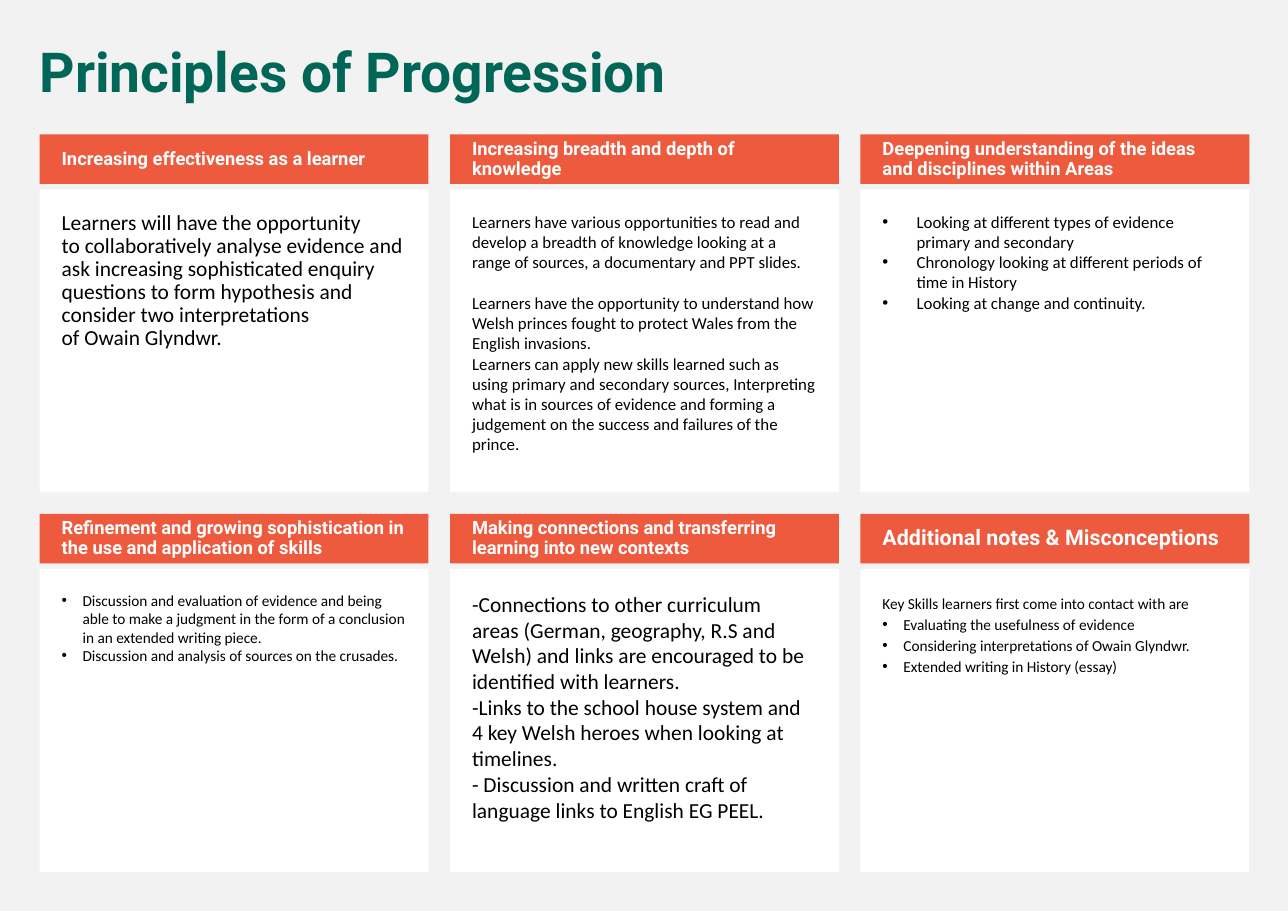
from dataclasses import dataclass

from lxml.etree import SubElement
from pptx import Presentation
from pptx.dml.color import RGBColor as Color
from pptx.enum.shapes import MSO_SHAPE as Shape
from pptx.enum.text import MSO_ANCHOR as Anchor, PP_ALIGN as Align
from pptx.oxml.ns import qn
from pptx.util import Inches, Pt


@dataclass(frozen=True)
class Theme:
    background: str = "F2F2F2"
    title: str = "006758"
    header: str = "ED5A3E"
    header_text: str = "FFFFFF"
    card: str = "FFFFFF"
    body_text: str = "000000"
    heading_font: str = "Roboto"
    body_font: str = "Calibri"
    title_size: int = 36
    header_size: int = 12
    large: int = 14
    medium: int = 11
    small: int = 10


theme = Theme()

# Grid in inches: three columns, two rows
SLIDE_WIDTH, SLIDE_HEIGHT = 11.69, 8.27
LEFT, RIGHT, TOP = 0.36, 11.34, 1.22
COLUMNS, COLUMN_WIDTH = 3, 3.53
GUTTER = (RIGHT - LEFT - COLUMNS * COLUMN_WIDTH) / (COLUMNS - 1)
HEADER_HEIGHT, HEADER_GAP, BODY_HEIGHT = 0.45, 0.05, 2.75
ROW_PITCH = HEADER_HEIGHT + HEADER_GAP + BODY_HEIGHT + GUTTER

# In the wording below, "~" stands for a no-break space
NO_BREAK_SPACE = chr(160)

# Each card: header, header size, body size, line spacing, bullet indent,
# space after each paragraph, paragraphs (a leading "•" makes a bullet)
cards = [
    ("Increasing effectiveness as a learner", theme.header_size, theme.large, 0.9, 0, [0], [
        "Learners will have the opportunity to~collaboratively~analyse~evidence and "
        "ask~increasing sophisticated enquiry questions to~form hypothesis and consider "
        "two~interpretations of~Owain~Glyndwr.~",
    ]),
    ("Increasing breadth and depth of knowledge", theme.header_size, theme.medium, 1, 0,
     [13.4, 0, 0], [
        "Learners have various opportunities to read and develop a~breadth of knowledge "
        "looking at a range of sources, a~documentary and PPT slides.",
        "Learners~have the opportunity to~understand how Welsh~princes fought to protect "
        "Wales from the English invasions.~",
        "Learners can apply new skills learned such as using primary~and secondary sources, "
        "Interpreting what is in sources of~evidence and forming a judgement on the success "
        "and~failures of the prince.",
    ]),
    ("Deepening understanding of the ideas and~disciplines within Areas",
     theme.header_size, theme.medium, 1, 0.31, [0, 0, 0], [
        "•Looking at different types of evidence primary and~secondary",
        "•Chronology looking at different periods of time in~History",
        "•Looking at change and continuity.",
    ]),
    ("Refinement and growing sophistication in the use and~application of skills",
     theme.header_size, theme.small, 1, 0.19, [0, 0], [
        "•Discussion and evaluation of evidence and being able to make a~judgment in the "
        "form of a conclusion in an extended writing~piece.",
        "•Discussion and analysis of sources on the crusades.~",
    ]),
    ("Making connections and transferring learning into~new contexts",
     theme.header_size, theme.large, 1, 0, [0, 0, 0], [
        "-Connections to other curriculum areas~(German, geography, R.S and Welsh) and "
        "links~are encouraged to be identified with learners.~",
        "-Links to the~school house~system and 4 key~Welsh heroes when looking at timelines.",
        "- Discussion and written craft of language links~to English EG PEEL.",
    ]),
    ("Additional notes & Misconceptions", theme.large, theme.small, 1.15, 0.19,
     [0, 0, 0, 0], [
        "Key Skills learners first~come into contact with~are",
        "•Evaluating the usefulness of evidence",
        "•Considering interpretations of~Owain~Glyndwr.",
        "•Extended writing in History (essay)",
    ]),
]

presentation = Presentation()
presentation.slide_width = Inches(SLIDE_WIDTH)
presentation.slide_height = Inches(SLIDE_HEIGHT)
slide = presentation.slides.add_slide(presentation.slide_layouts[6])
slide.background.fill.solid()
slide.background.fill.fore_color.rgb = Color.from_string(theme.background)


def add_panel(left, top, height, fill, anchor, insets):
    """Add a plain filled rectangle one column wide and return its text frame."""
    panel = slide.shapes.add_shape(
        Shape.RECTANGLE, Inches(left), Inches(top), Inches(COLUMN_WIDTH), Inches(height))
    panel.shadow.inherit = False
    panel.fill.solid()
    panel.fill.fore_color.rgb = Color.from_string(fill)
    panel.line.fill.background()
    frame = panel.text_frame
    frame.word_wrap = True
    frame.vertical_anchor = anchor
    frame.margin_left, frame.margin_top, frame.margin_right, frame.margin_bottom = map(
        Inches, insets)
    return frame


def write(paragraph, text, font, size, color, bold=False, spacing=0.9):
    """Add one styled run to a left-aligned paragraph."""
    paragraph.alignment = Align.LEFT
    paragraph.line_spacing = spacing
    run = paragraph.add_run()
    run.text = text.replace("~", NO_BREAK_SPACE)
    run.font.name = font
    run.font.size = Pt(size)
    run.font.bold = bold
    run.font.color.rgb = Color.from_string(color)


# Title
title = slide.shapes.add_textbox(Inches(0.26), Inches(0.36), Inches(11.08), Inches(0.65))
title.text_frame.word_wrap = True
write(title.text_frame.paragraphs[0], "Principles of Progression",
      theme.heading_font, theme.title_size, theme.title, bold=True)

# Cards
for index, (heading, heading_size, size, spacing, indent, gaps, texts) in enumerate(cards):
    row, column = divmod(index, COLUMNS)
    left = LEFT + column * (COLUMN_WIDTH + GUTTER)
    top = TOP + row * ROW_PITCH

    # White body
    body = add_panel(left, top + HEADER_HEIGHT + HEADER_GAP, BODY_HEIGHT, theme.card,
                     Anchor.TOP, (0.2, 0.2, 0.2, 0.2))
    for number, (text, gap) in enumerate(zip(texts, gaps)):
        paragraph = body.add_paragraph() if number else body.paragraphs[0]
        write(paragraph, text.removeprefix("•"), theme.body_font, size, theme.body_text,
              spacing=spacing)
        paragraph.space_after = Pt(gap)
        if text.startswith("•"):
            properties = paragraph._p.get_or_add_pPr()
            properties.set("marL", str(Inches(indent)))
            properties.set("indent", str(-Inches(indent)))
            SubElement(properties, qn("a:buFont"), typeface="Arial")
            SubElement(properties, qn("a:buChar"), char="•")

    # Coloured header
    header = add_panel(left, top, HEADER_HEIGHT, theme.header,
                       Anchor.MIDDLE, (0.2, 0.05, 0.1, 0.05))
    write(header.paragraphs[0], heading, theme.heading_font, heading_size,
          theme.header_text, bold=True)

presentation.save("out.pptx")
